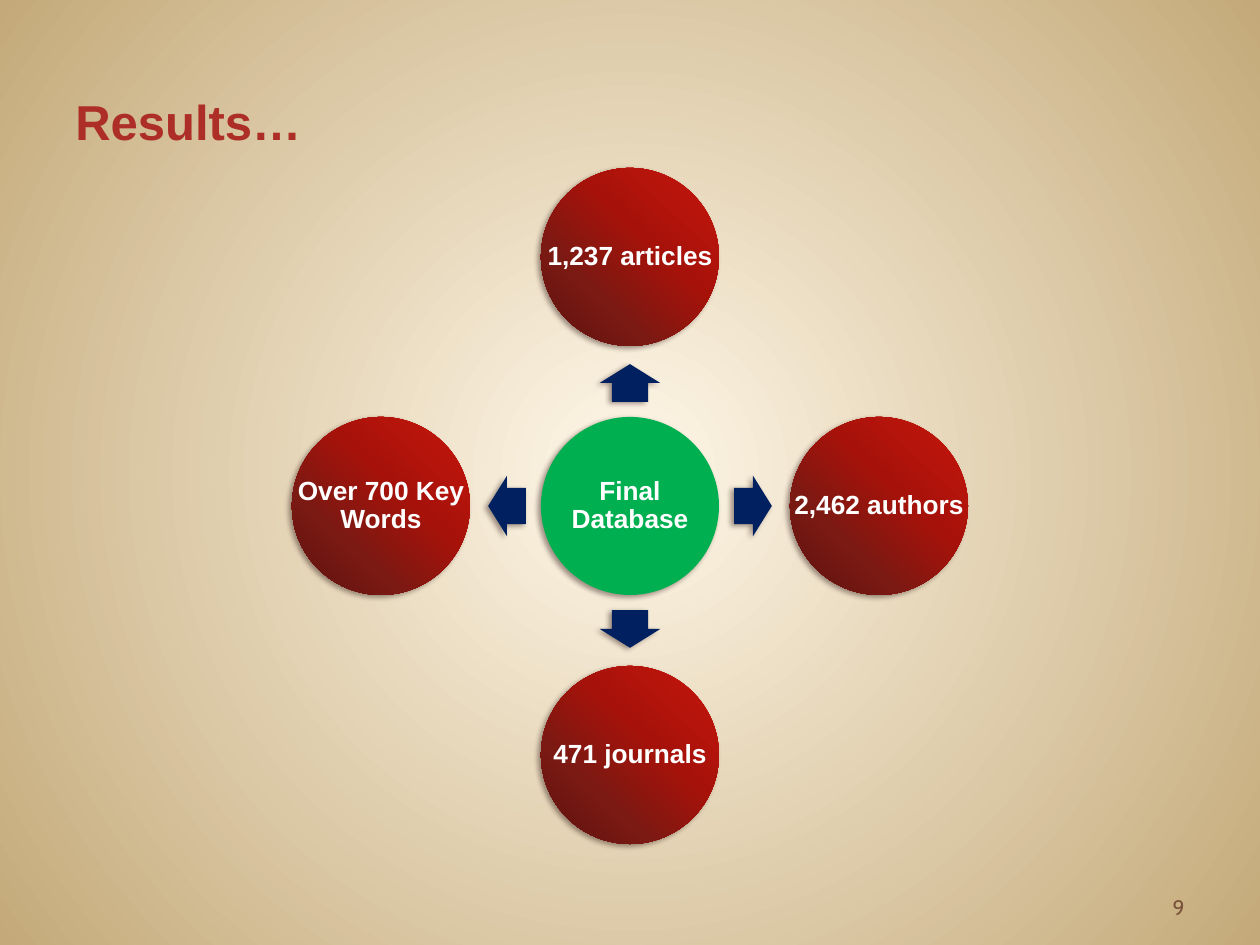
import lxml.etree
import pptx
import pptx.dml.color
import pptx.enum.shapes
import pptx.enum.text
import pptx.oxml
import pptx.oxml.ns
import pptx.util

Cm = pptx.util.Cm
Kind = pptx.enum.shapes.MSO_SHAPE
Side = pptx.enum.text.PP_ALIGN
Hold = pptx.enum.text.MSO_ANCHOR
qn = pptx.oxml.ns.qn
space = pptx.oxml.ns.nsdecls("a")


def hue(code):
    return pptx.dml.color.RGBColor.from_string(code)


def write(box, text, size, color, font="Arial", bold=True,
          align=Side.CENTER, anchor=Hold.MIDDLE, inset=0.05, line=0.9):
    frame = box.text_frame
    frame.word_wrap = True
    frame.vertical_anchor = anchor
    frame.margin_left = frame.margin_right = Cm(inset)
    frame.margin_top = frame.margin_bottom = Cm(min(inset, 0.13))
    para = frame.paragraphs[0]
    para.alignment = align
    para.line_spacing = line
    run = para.add_run()
    run.text = text
    run.font.size = pptx.util.Pt(size)
    run.font.name = font
    run.font.bold = bold
    run.font.color.rgb = hue(color)


deck = pptx.Presentation()
deck.slide_width, deck.slide_height = Cm(25.4), Cm(19.05)
slide = deck.slides.add_slide(deck.slide_layouts[5])
slide.background.fill.gradient()

title = slide.shapes.title
title.left, title.top, title.width, title.height = Cm(1.27), Cm(0.84), Cm(22.86), Cm(3.18)
write(title, "Results…", 28, "AD2E27", align=Side.LEFT, inset=0.25, line=1)

mid_x, mid_y = 12.7, 10.2
disc, reach = 3.59, 5.02
long, wide, gap = 0.76, 1.22, 2.48
nodes = [
    ("Final Database", 0, 0, None),
    ("1,237 articles", 0, -1, 270),
    ("2,462 authors", 1, 0, 0),
    ("471 journals", 0, 1, 90),
    ("Over 700 Key Words", -1, 0, 180),
]
forms = []
for text, dx, dy, turn in nodes:
    if turn is not None:
        arrow = slide.shapes.add_shape(
            Kind.RIGHT_ARROW, Cm(mid_x + dx * gap - long / 2),
            Cm(mid_y + dy * gap - wide / 2), Cm(long), Cm(wide))
        arrow.adjustments[0] = 0.6
        arrow.adjustments[1] = 0.5
        arrow.rotation = turn
        arrow.fill.solid()
        arrow.fill.fore_color.rgb = hue("002060")
        forms.append(arrow)
    place = (Cm(mid_x + dx * reach - disc / 2), Cm(mid_y + dy * reach - disc / 2),
             Cm(disc), Cm(disc))
    ball = slide.shapes.add_shape(Kind.OVAL, *place)
    if turn is None:
        ball.fill.solid()
        ball.fill.fore_color.rgb = hue("00B050")
    else:
        ball.fill.gradient()
        ball.fill.gradient_angle = 360 - 133
    forms.append(ball)
    write(slide.shapes.add_textbox(*place), text, 15, "FFFFFF")

for form in forms:
    form.line.fill.background()
    form.shadow.inherit = False
    glow = form._element.spPr.find(qn("a:effectLst"))
    glow.append(pptx.oxml.parse_xml(
        f'<a:outerShdw {space} blurRad="39370" dist="25400" dir="9000000" '
        'algn="tl" rotWithShape="0"><a:srgbClr val="1A0000">'
        '<a:alpha val="40000"/></a:srgbClr></a:outerShdw>'))

sand = [(0, "FFF7E8"), (100, "C4AA7A")]
red = [(0, "C8160C"), (40, "A6120A"), (70, "7B1913"), (100, "5B120E")]
for grad in slide._element.iter(qn("a:gradFill")):
    back = grad.getparent().tag == qn("p:bgPr")
    stops = grad.find(qn("a:gsLst"))
    for stop in list(stops):
        stops.remove(stop)
    for spot, code in sand if back else red:
        stop = lxml.etree.SubElement(stops, qn("a:gs"), pos=str(spot * 1000))
        lxml.etree.SubElement(stop, qn("a:srgbClr"), val=code)
    if back:
        grad.replace(grad.find(qn("a:lin")), pptx.oxml.parse_xml(
            f'<a:path {space} path="circle">'
            '<a:fillToRect l="50000" t="50000" r="50000" b="50000"/></a:path>'))

page = slide.shapes.add_textbox(Cm(18.2), Cm(17.35), Cm(5.93), Cm(1.32))
write(page, "9", 12, "795339", font="Cabin", bold=False, align=Side.RIGHT,
      anchor=Hold.BOTTOM, inset=0.25, line=1)

deck.save("out.pptx")
